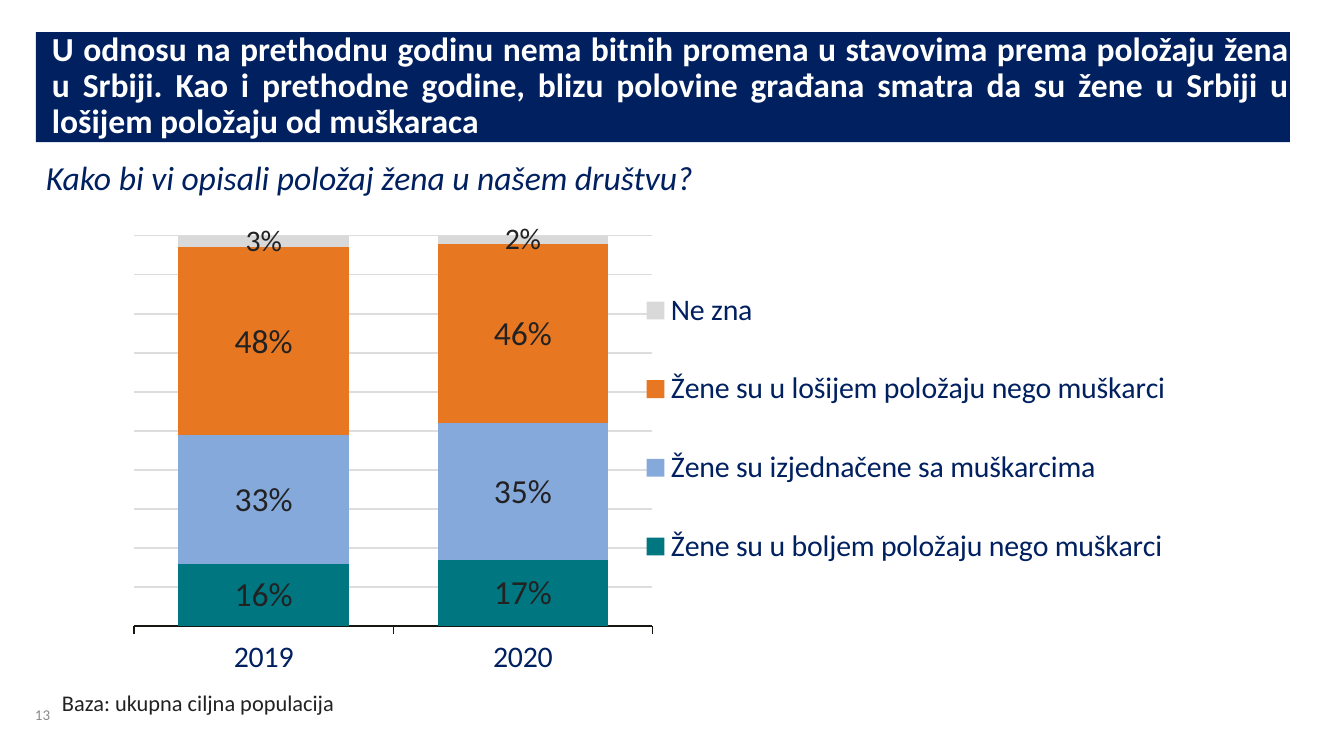
from dataclasses import dataclass

from lxml.etree import SubElement
from pptx import Presentation
from pptx.chart.data import CategoryChartData
from pptx.dml.color import RGBColor
from pptx.enum.chart import (XL_CHART_TYPE as ChartType, XL_LABEL_POSITION as LabelPosition,
                             XL_LEGEND_POSITION as LegendPosition, XL_TICK_MARK as TickMark)
from pptx.enum.text import (MSO_ANCHOR as Anchor, MSO_AUTO_SIZE as AutoSize,
                            PP_ALIGN as Align)
from pptx.oxml.ns import qn
from pptx.util import Emu, Pt

PX_PER_INCH = 134.4
TITLE_ONLY = 5


@dataclass(frozen=True)
class Theme:
    font: str = "Calibri"
    navy: str = "002060"
    ink: str = "222223"
    white: str = "FFFFFF"
    muted: str = "888B8D"
    grid: str = "DDDDDE"
    axis: str = "161612"
    teal: str = "007681"
    blue: str = "86A9DC"
    orange: str = "E87722"
    grey: str = "D9D9D9"
    heading: int = 18
    label: int = 16
    note: int = 12
    number: int = 8


def px(length):
    return Emu(round(length * 914400 / PX_PER_INCH))


def rgb(color):
    return RGBColor.from_string(color)


def style_font(font, theme, size, color, bold=False, italic=False):
    font.name, font.size = theme.font, Pt(size)
    font.bold, font.italic = bold, italic
    font.color.rgb = rgb(color)


def write_text(shape, text, *, theme, size, color, bold=False, italic=False,
               align=Align.LEFT, anchor=Anchor.TOP, insets=(0, 0, 0, 0), wrap=True,
               grow=False, line_spacing=1.0, space_before=0):
    frame = shape.text_frame
    frame.word_wrap, frame.vertical_anchor = wrap, anchor
    frame.auto_size = AutoSize.SHAPE_TO_FIT_TEXT if grow else AutoSize.NONE
    (frame.margin_left, frame.margin_top,
     frame.margin_right, frame.margin_bottom) = map(px, insets)
    paragraph = frame.paragraphs[0]
    paragraph.alignment = align
    paragraph.line_spacing, paragraph.space_before = line_spacing, Pt(space_before)
    run = paragraph.add_run()
    run.text = text
    style_font(run.font, theme, size, color, bold, italic)


def set_layout(parent, index, box, inner=False):
    """Fix a chart part at fractions (x, y, w, h) of the chart area."""
    for old_layout in parent.findall(qn("c:layout")):
        parent.remove(old_layout)
    layout = SubElement(parent, qn("c:layout"))
    parent.insert(index, layout)
    manual = SubElement(layout, qn("c:manualLayout"))
    settings = [("layoutTarget", "inner")] if inner else []
    settings += [("xMode", "edge"), ("yMode", "edge"), *zip("xywh", box)]
    for name, value in settings:
        SubElement(manual, qn(f"c:{name}")).set("val", str(value))


class SlideBuilder:
    def __init__(self, slide, theme):
        self.slide, self.theme = slide, theme

    def banner(self, box, text):
        title = self.slide.shapes.title
        title.left, title.top, title.width, title.height = map(px, box)
        title.fill.solid()
        title.fill.fore_color.rgb = rgb(self.theme.navy)
        write_text(title, text, theme=self.theme, size=self.theme.heading,
                   color=self.theme.white, bold=True, align=Align.JUSTIFY,
                   insets=(16, 0, 0, 0), grow=True, line_spacing=0.9, space_before=4.1)

    def text(self, box, text, **text_format):
        shape = self.slide.shapes.add_textbox(*map(px, box))
        write_text(shape, text, theme=self.theme, **text_format)

    def stacked_chart(self, box, categories, series_rows, plot_box, legend_box):
        theme = self.theme
        data = CategoryChartData()
        data.categories = categories
        for name, values, *_ in series_rows:
            data.add_series(name, values)
        chart = self.slide.shapes.add_chart(
            ChartType.COLUMN_STACKED_100, *map(px, box), data).chart
        chart.has_title = False
        style_font(chart.font, theme, theme.label, theme.ink)

        # Columns and their labels
        plot = chart.plots[0]
        plot.gap_width, plot.overlap, plot.vary_by_categories = 52, 100, False
        for series, (_, _, color, label_size) in zip(plot.series, series_rows):
            series.format.fill.solid()
            series.format.fill.fore_color.rgb = rgb(color)
            labels = series.data_labels
            labels.show_value, labels.position = True, LabelPosition.CENTER
            labels.number_format, labels.number_format_is_linked = r"0\%", False
            style_font(labels.font, theme, label_size, theme.ink)

        # Axes and gridlines
        category_axis, value_axis = chart.category_axis, chart.value_axis
        category_axis.major_tick_mark = TickMark.OUTSIDE
        style_font(category_axis.tick_labels.font, theme, theme.label, theme.navy)
        value_axis.visible, value_axis.has_major_gridlines = False, True
        for part, color in ((category_axis, theme.axis),
                            (value_axis.major_gridlines, theme.grid)):
            part.format.line.color.rgb = rgb(color)
            part.format.line.width = Pt(0.75)

        # Legend and placement
        chart.has_legend = True
        chart.legend.position = LegendPosition.RIGHT
        chart.legend.include_in_layout = False
        style_font(chart.legend.font, theme, theme.label, theme.navy)
        chart_xml = chart.element.find(qn("c:chart"))
        set_layout(chart_xml.find(qn("c:plotArea")), 0, plot_box, inner=True)
        set_layout(chart_xml.find(qn("c:legend")), 1, legend_box)


def main():
    theme = Theme()
    presentation = Presentation()
    presentation.slide_width, presentation.slide_height = px(1344), px(756)
    slide = presentation.slides.add_slide(presentation.slide_layouts[TITLE_ONLY])
    builder = SlideBuilder(slide, theme)

    # Headline and survey question
    builder.banner((36, 32, 1254, 110),
                   "U odnosu na prethodnu godinu nema bitnih promena u stavovima prema "
                   "položaju žena u Srbiji. Kao i prethodne godine, blizu polovine građana "
                   "smatra da su žene u Srbiji u lošijem položaju od muškaraca")
    builder.text((36, 148, 714, 55), "Kako bi vi opisali položaj žena u našem društvu?",
                 size=theme.heading, color=theme.navy, italic=True, anchor=Anchor.BOTTOM,
                 insets=(10, 5, 10, 5), line_spacing=0.9)

    # Answers by year
    answers = [
        ("Žene su u boljem položaju nego muškarci", (16, 17), theme.teal, theme.heading),
        ("Žene su izjednačene sa muškarcima", (33, 35), theme.blue, theme.heading),
        ("Žene su u lošijem položaju nego muškarci", (48, 46), theme.orange, theme.heading),
        ("Ne zna", (3, 2), theme.grey, theme.label),
    ]
    builder.stacked_chart((112, 212, 1103, 476), ("2019", "2020"), answers,
                          plot_box=(0.02, 0.05, 0.47, 0.82),
                          legend_box=(0.46, 0.08, 0.52, 0.75))

    # Footer
    builder.text((62, 689, 276, 27), "Baza: ukupna ciljna populacija",
                 size=theme.note, color=theme.ink, wrap=False, grow=True)
    builder.text((35, 689, 46, 35), "13", size=theme.number, color=theme.muted,
                 anchor=Anchor.BOTTOM, wrap=False, line_spacing=0.85, space_before=2)

    presentation.save("out.pptx")


if __name__ == "__main__":
    main()
